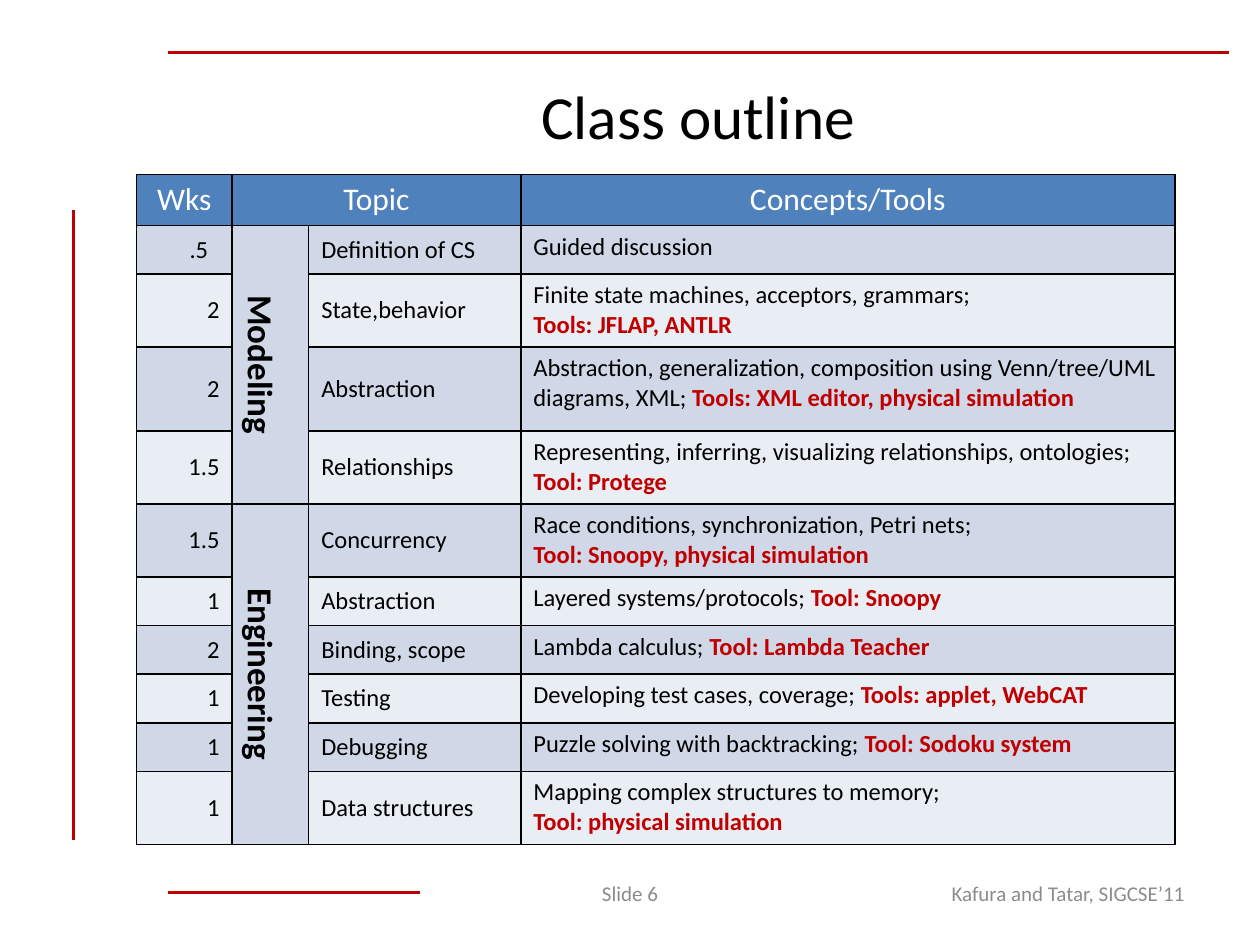
from dataclasses import dataclass
from lxml.etree import SubElement as Sub
from pptx import Presentation
from pptx.dml.color import RGBColor as Rgb
from pptx.enum.shapes import MSO_CONNECTOR as Conn
from pptx.enum.text import MSO_ANCHOR as Anchor, MSO_AUTO_SIZE as Auto, PP_ALIGN as Align
from pptx.oxml.ns import qn
from pptx.util import Inches, Pt


@dataclass(frozen=True)
class Theme:
    font: str = "Calibri"
    ink: str = "000000"
    red: str = "C00000"
    gray: str = "8C8C8C"
    white: str = "FFFFFF"
    head: str = "4F81BD"
    bands: tuple = ("D0D8E8", "E9EDF4")
    title: int = 35
    phase: int = 20
    top: int = 18
    body: int = 14
    foot: int = 12
    rule: float = 1.5
    edge: float = 1


T = Theme()
UNIT = 12
COLS = (9.1, 7.3, 20.2, 62.3)
HEAD, LOW, MID, TALL = 4.86, 4.63, 6.95, 8
RULES = ((7, 20, 7, 80), (16, 5, 117, 5), (40, 85, 16, 85))
PHASES = (("Modeling", 1, 4), ("Engineering", 5, 10))
ROWS = (
    (LOW, ".5", "Definition of CS", [("Guided discussion", "")]),
    (MID, "2", "State,behavior",
     [("Finite state machines, acceptors, grammars;", ""), ("", "Tools: JFLAP, ANTLR")]),
    (TALL, "2", "Abstraction",
     [("Abstraction, generalization, composition using Venn/tree/UML diagrams, XML; ",
       "Tools: XML editor, physical simulation")]),
    (MID, "1.5", "Relationships",
     [("Representing, inferring, visualizing relationships, ontologies; ", "Tool: Protege")]),
    (MID, "1.5", "Concurrency",
     [("Race conditions, synchronization, Petri nets;", ""),
      ("", "Tool: Snoopy, physical simulation")]),
    (LOW, "1", "Abstraction", [("Layered systems/protocols; ", "Tool: Snoopy")]),
    (LOW, "2", "Binding, scope", [("Lambda calculus; ", "Tool: Lambda Teacher")]),
    (LOW, "1", "Testing", [("Developing test cases, coverage; ", "Tools: applet, WebCAT")]),
    (LOW, "1", "Debugging", [("Puzzle solving with backtracking; ", "Tool: Sodoku system")]),
    (MID, "1", "Data structures",
     [("Mapping complex structures to memory;", ""), ("", "Tool: physical simulation")]),
)


def grid(*vals):
    return [Inches(val / UNIT) for val in vals]


def style(run, size, color, bold=False):
    font = run.font
    font.name, font.size, font.bold = T.font, Pt(size), bold
    font.color.rgb = Rgb.from_string(color)


def write(frame, text, size, color, align, bold=False):
    frame.text = text
    para = frame.paragraphs[0]
    para.alignment = align
    style(para.runs[0], size, color, bold)


def add_rule(slide, ends):
    line = slide.shapes.add_connector(Conn.STRAIGHT, *grid(*ends))
    line.line.color.rgb = Rgb.from_string(T.red)
    line.line.width = Pt(T.rule)
    Sub(line._element.spPr, qn("a:effectLst"))


def add_title(slide, text, box):
    title = slide.shapes.title
    title.left, title.top, title.width, title.height = grid(*box)
    frame = title.text_frame
    frame.auto_size = Auto.NONE
    frame.vertical_anchor = Anchor.MIDDLE
    write(frame, text, T.title, T.ink, Align.CENTER)


def add_foot(slide, text, box, align):
    frame = slide.shapes.add_textbox(*grid(*box)).text_frame
    frame.word_wrap = True
    frame.vertical_anchor = Anchor.MIDDLE
    write(frame, text, T.foot, T.gray, align)


def paint(cell, color):
    props = cell._tc.get_or_add_tcPr()
    for side in ("lnL", "lnR", "lnT", "lnB"):
        edge = Sub(props, qn(f"a:{side}"), w=str(Pt(T.edge)))
        Sub(Sub(edge, qn("a:solidFill")), qn("a:srgbClr"), val=T.ink)
    cell.fill.solid()
    cell.fill.fore_color.rgb = Rgb.from_string(color)


def fill_tools(cell, lines):
    frame = cell.text_frame
    for i, (plain, tool) in enumerate(lines):
        para = frame.add_paragraph() if i else frame.paragraphs[0]
        for text, color, bold in ((plain, T.ink, False), (tool, T.red, True)):
            if text:
                run = para.add_run()
                run.text = text
                style(run, T.body, color, bold)


def fill_row(table, row, weeks, topic, lines):
    for col, text, align in ((0, weeks, Align.RIGHT), (2, topic, Align.LEFT)):
        cell = table.cell(row, col)
        cell.vertical_anchor = Anchor.MIDDLE
        write(cell.text_frame, text, T.body, T.ink, align)
    fill_tools(table.cell(row, 3), lines)


def fill_phase(table, name, first, last):
    cell = table.cell(first, 1)
    cell.merge(table.cell(last, 1))
    cell.vertical_anchor = Anchor.MIDDLE
    cell._tc.get_or_add_tcPr().set("vert", "vert")
    write(cell.text_frame, name, T.phase, T.ink, Align.CENTER, True)


def add_outline(slide, left, top):
    highs = [HEAD] + [row[0] for row in ROWS]
    box = grid(left, top, sum(COLS), sum(highs))
    table = slide.shapes.add_table(len(highs), len(COLS), *box).table
    for col, wide in zip(table.columns, grid(*COLS)):
        col.width = wide
    for i, (row, high) in enumerate(zip(table.rows, grid(*highs))):
        row.height = high
        for j, cell in enumerate(row.cells):
            band = T.bands[0 if j == 1 else (i - 1) % 2]
            paint(cell, band if i else T.head)
    table.cell(0, 1).merge(table.cell(0, 2))
    for col, text in ((0, "Wks"), (1, "Topic"), (3, "Concepts/Tools")):
        write(table.cell(0, col).text_frame, text, T.top, T.white, Align.CENTER)
    for phase in PHASES:
        fill_phase(table, *phase)
    for i, (_, *vals) in enumerate(ROWS, 1):
        fill_row(table, i, *vals)
    table.cell(1, 0).margin_right = Inches(0.19)


def main():
    deck = Presentation()
    deck.slide_width, deck.slide_height = Inches(10), Inches(7.5)
    slide = deck.slides.add_slide(deck.slide_layouts[5])
    for ends in RULES:
        add_rule(slide, ends)
    add_title(slide, "Class outline", (16, 6, 101, 10))
    add_outline(slide, 13, 16.6)
    add_foot(slide, "Slide 6", (41, 82.7, 38, 4.8), Align.CENTER)
    add_foot(slide, "Kafura and Tatar, SIGCSE’11", (86, 82.7, 28, 4.8), Align.RIGHT)
    deck.save("out.pptx")


if __name__ == "__main__":
    main()
